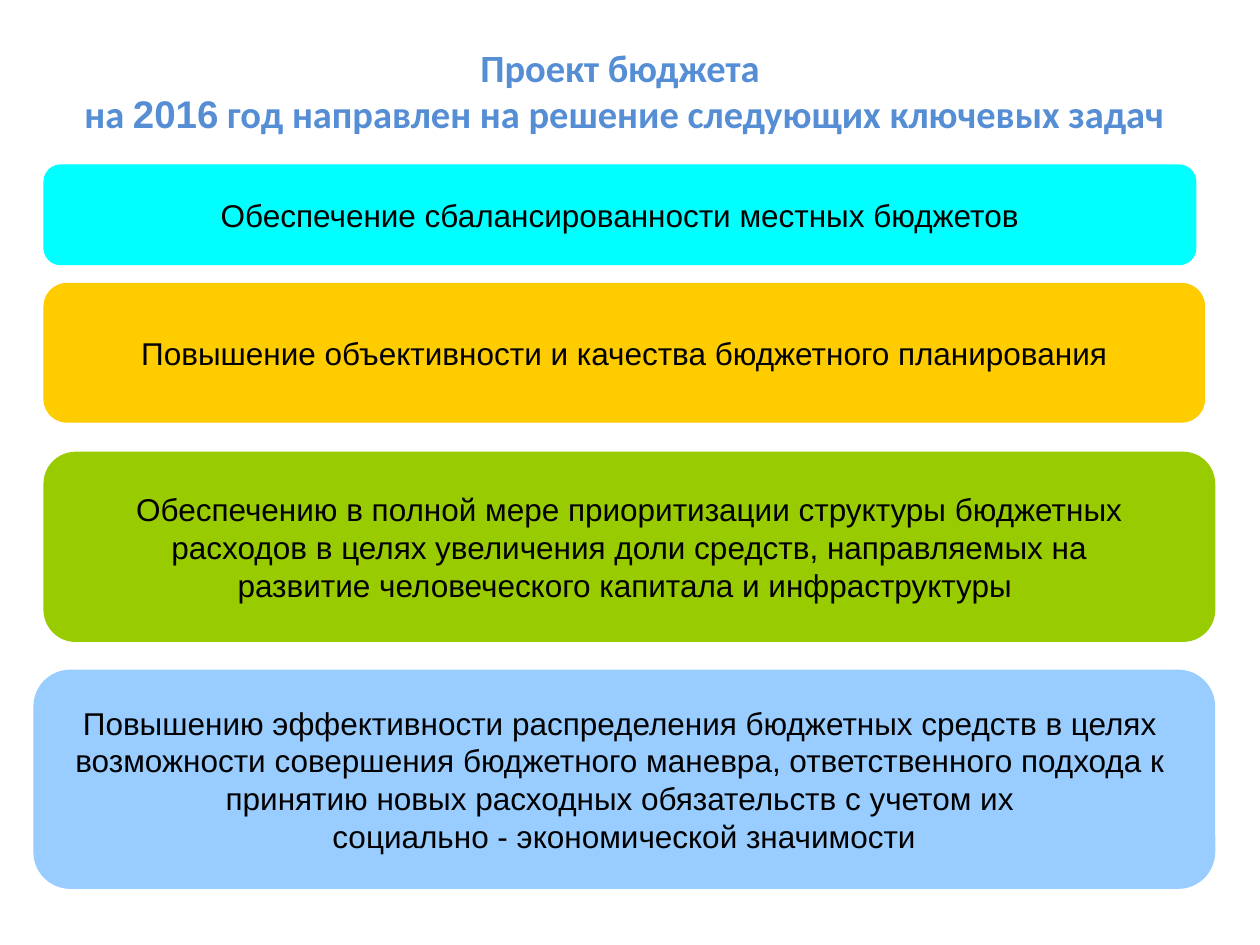
from pptx import Presentation
from pptx.dml.color import RGBColor
from pptx.enum.shapes import MSO_SHAPE
from pptx.enum.text import MSO_ANCHOR, MSO_AUTO_SIZE, PP_ALIGN
from pptx.util import Inches, Pt

THEME = {
    "title_color": RGBColor.from_string("558ED5"),
    "text_color": RGBColor.from_string("000000"),
    "title_font": "Calibri",
    "body_font": "Arial",
    "title_size": Pt(22),
    "body_size": Pt(18),
    "line_width": Pt(0.75),
    "cyan": RGBColor.from_string("00FFFF"),
    "amber": RGBColor.from_string("FFCC00"),
    "green": RGBColor.from_string("99CC00"),
    "blue": RGBColor.from_string("99CCFF"),
}


def format_run(run, font_name, size, color, bold=False):
    run.font.name = font_name
    run.font.size = size
    run.font.color.rgb = color
    run.font.bold = bold


presentation = Presentation()
presentation.slide_width = Inches(10)
presentation.slide_height = Inches(7.5)
slide = presentation.slides.add_slide(presentation.slide_layouts[5])

# Title, with the year in the body font
title = slide.shapes.title
title.left, title.top = Inches(0.27), Inches(0.28)
title.width, title.height = Inches(9.37), Inches(0.87)
title_frame = title.text_frame
title_frame.auto_size = MSO_AUTO_SIZE.NONE
title_frame.vertical_anchor = MSO_ANCHOR.MIDDLE
title_paragraph = title_frame.paragraphs[0]
title_paragraph.text = "Проект бюджета \vна "
title_paragraph.alignment = PP_ALIGN.CENTER
for text in ("2016", " год направлен на решение следующих ключевых задач"):
    title_paragraph.add_run().text = text
for run in title_paragraph.runs:
    font_name = THEME["body_font"] if run.text == "2016" else THEME["title_font"]
    format_run(run, font_name, THEME["title_size"], THEME["title_color"], bold=True)

# Task panels: left, top, width, height, color, lines
tasks = [
    (0.35, 1.31, 9.14, 0.79, "cyan", ["Обеспечение сбалансированности местных бюджетов"]),
    (0.35, 2.25, 9.21, 1.1, "amber", ["Повышение объективности и качества бюджетного планирования"]),
    (0.35, 3.59, 9.29, 1.5, "green", [
        "Обеспечению в полной мере приоритизации структуры бюджетных",
        " расходов в целях увеличения доли средств, направляемых на ",
        "развитие человеческого капитала и инфраструктуры ",
    ]),
    (0.27, 5.32, 9.37, 1.73, "blue", [
        "Повышению эффективности распределения бюджетных средств в целях ",
        "возможности совершения бюджетного маневра, ответственного подхода к ",
        "принятию новых расходных обязательств с учетом их ",
        "социально - экономической значимости",
    ]),
]
for left, top, width, height, color, lines in tasks:
    panel = slide.shapes.add_shape(
        MSO_SHAPE.ROUNDED_RECTANGLE,
        Inches(left), Inches(top), Inches(width), Inches(height),
    )
    panel.shadow.inherit = False
    panel.fill.solid()
    panel.fill.fore_color.rgb = THEME[color]
    panel.line.color.rgb = THEME[color]
    panel.line.width = THEME["line_width"]
    text_frame = panel.text_frame
    text_frame.word_wrap = False
    text_frame.vertical_anchor = MSO_ANCHOR.MIDDLE
    text_frame.text = "\n".join(lines)
    for paragraph in text_frame.paragraphs:
        paragraph.alignment = PP_ALIGN.CENTER
        for run in paragraph.runs:
            format_run(run, THEME["body_font"], THEME["body_size"], THEME["text_color"])

presentation.save("out.pptx")
